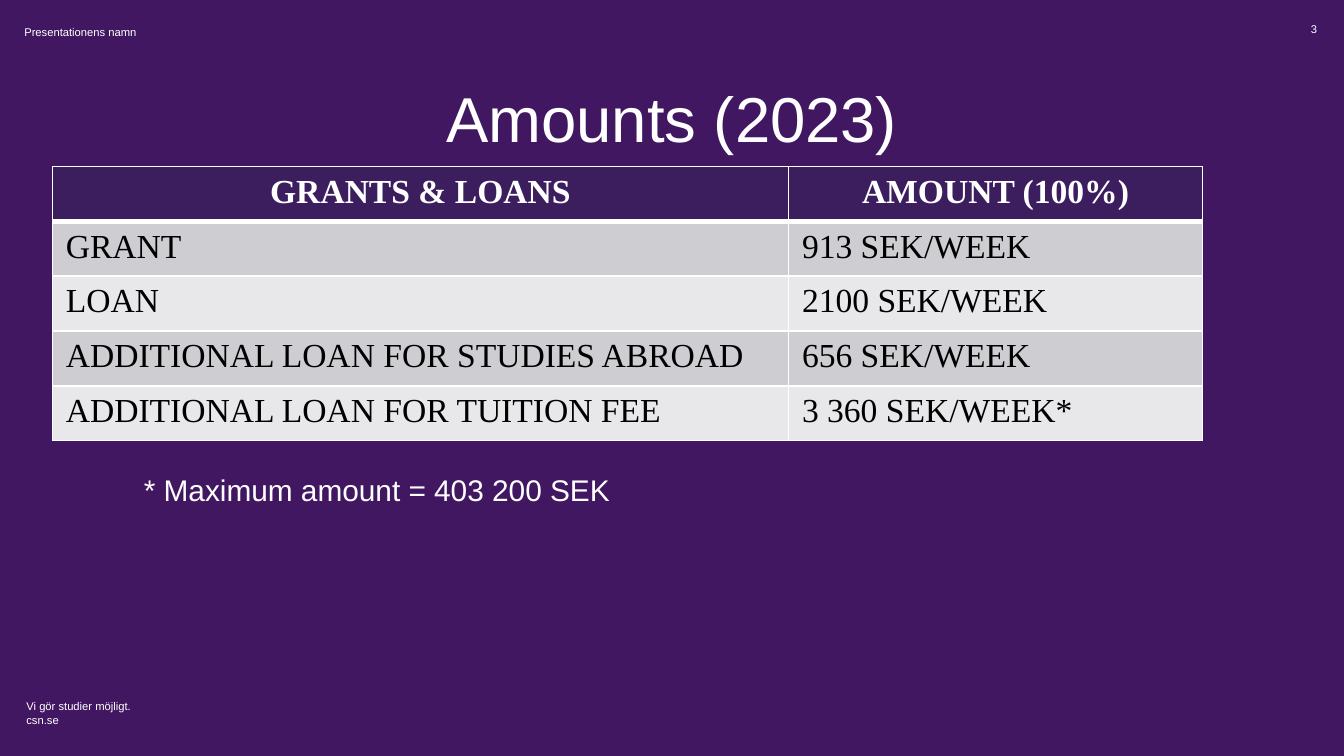
from lxml import etree
from pptx import Presentation
from pptx.dml.color import RGBColor
from pptx.enum.text import MSO_ANCHOR, PP_ALIGN
from pptx.oxml.ns import qn
from pptx.util import Cm, Pt

LEFT, CENTER, RIGHT = PP_ALIGN.LEFT, PP_ALIGN.CENTER, PP_ALIGN.RIGHT
TOP, MIDDLE, BOTTOM = MSO_ANCHOR.TOP, MSO_ANCHOR.MIDDLE, MSO_ANCHOR.BOTTOM

COLORS = {
    "background": "421761",
    "header": "3C1E5F",
    "dark_band": "CECDD2",
    "light_band": "E8E8EA",
    "white": "FFFFFF",
    "black": "000000",
}

AMOUNTS = [
    ("GRANTS & LOANS", "AMOUNT (100%)"),
    ("GRANT", "913 SEK/WEEK"),
    ("LOAN", "2100 SEK/WEEK"),
    ("ADDITIONAL LOAN FOR STUDIES ABROAD", "656 SEK/WEEK"),
    ("ADDITIONAL LOAN FOR TUITION FEE", "3 360 SEK/WEEK*"),
]


def rgb(name):
    return RGBColor.from_string(COLORS[name])


def add_span(para, text, size, color="white", font="Arial", bold=False):
    span = para.add_run()
    span.text = text
    span.font.name = font
    span.font.size = Pt(size)
    span.font.bold = bold
    span.font.color.rgb = rgb(color)


def add_text(page, area, lines, size, align=LEFT, anchor=TOP, spacing=1.0, wrap=True):
    box = page.shapes.add_textbox(*(Cm(length) for length in area))
    frame = box.text_frame
    frame.word_wrap = wrap
    frame.vertical_anchor = anchor
    frame.margin_left = frame.margin_right = 0
    frame.margin_top = frame.margin_bottom = 0
    for index, line in enumerate(lines):
        para = frame.add_paragraph() if index else frame.paragraphs[0]
        para.alignment = align
        para.line_spacing = spacing
        add_span(para, line, size)


def set_borders(cell, widths):
    properties = cell._tc.get_or_add_tcPr()
    for position, (side, width) in enumerate(widths.items()):
        line = etree.Element(qn(f"a:{side}"), w=str(Pt(width)))
        fill = etree.SubElement(line, qn("a:solidFill"))
        etree.SubElement(fill, qn("a:srgbClr"), val=COLORS["white"])
        properties.insert(position, line)


def add_amounts_table(page, area):
    left, top, width, height = area
    row_count = len(AMOUNTS)
    frame = page.shapes.add_table(
        row_count, 2, Cm(left), Cm(top), Cm(width), Cm(height)
    )
    table = frame.table
    for column, share in zip(table.columns, (0.64, 0.36)):
        column.width = Cm(width * share)
    for row_index, values in enumerate(AMOUNTS):
        is_header = row_index == 0
        band = "dark_band" if row_index % 2 else "light_band"
        for column_index, value in enumerate(values):
            cell = table.cell(row_index, column_index)
            cell.fill.solid()
            cell.fill.fore_color.rgb = rgb("header" if is_header else band)
            set_borders(cell, {
                "lnL": 1,
                "lnR": 1,
                "lnT": 3 if row_index == 1 else 1,
                "lnB": 3 if is_header else 1,
            })
            para = cell.text_frame.paragraphs[0]
            para.alignment = CENTER if is_header else LEFT
            add_span(para, value, 18, "white" if is_header else "black",
                     "Times New Roman", is_header)


def add_header(page, area):
    left, top, width, height = area
    add_text(page, (left, top, 9.8, height), ["Presentationens namn"], 6, wrap=False)
    number_width = 2.5
    add_text(page, (left + width - number_width, top - 0.05, number_width, 0.3),
             ["3"], 6, RIGHT)


def add_footer(page, area):
    add_text(page, area, ["Vi gör studier möjligt.", "csn.se"], 6,
             anchor=BOTTOM, wrap=False)


def build_amounts_slide(deck):
    page = deck.slides.add_slide(deck.slide_layouts[6])
    page.background.fill.solid()
    page.background.fill.fore_color.rgb = rgb("background")
    add_footer(page, (0.5, 13.23, 2.5, 0.5))
    add_text(page, (2.72, 5.46, 18, 7.26), ["* Maximum amount = 403 200 SEK"],
             16, anchor=MIDDLE, spacing=1.5)
    add_text(page, (1.2, 0.78, 23, 1.6), ["Amounts (2023)"], 34, CENTER, spacing=1.5)
    add_header(page, (0.46, 0.48, 24.43, 1))
    add_amounts_table(page, (0.99, 3.15, 21.74, 5.18))


def main():
    deck = Presentation()
    deck.slide_width, deck.slide_height = Cm(25.4), Cm(14.29)
    build_amounts_slide(deck)
    deck.save("out.pptx")


if __name__ == "__main__":
    main()
